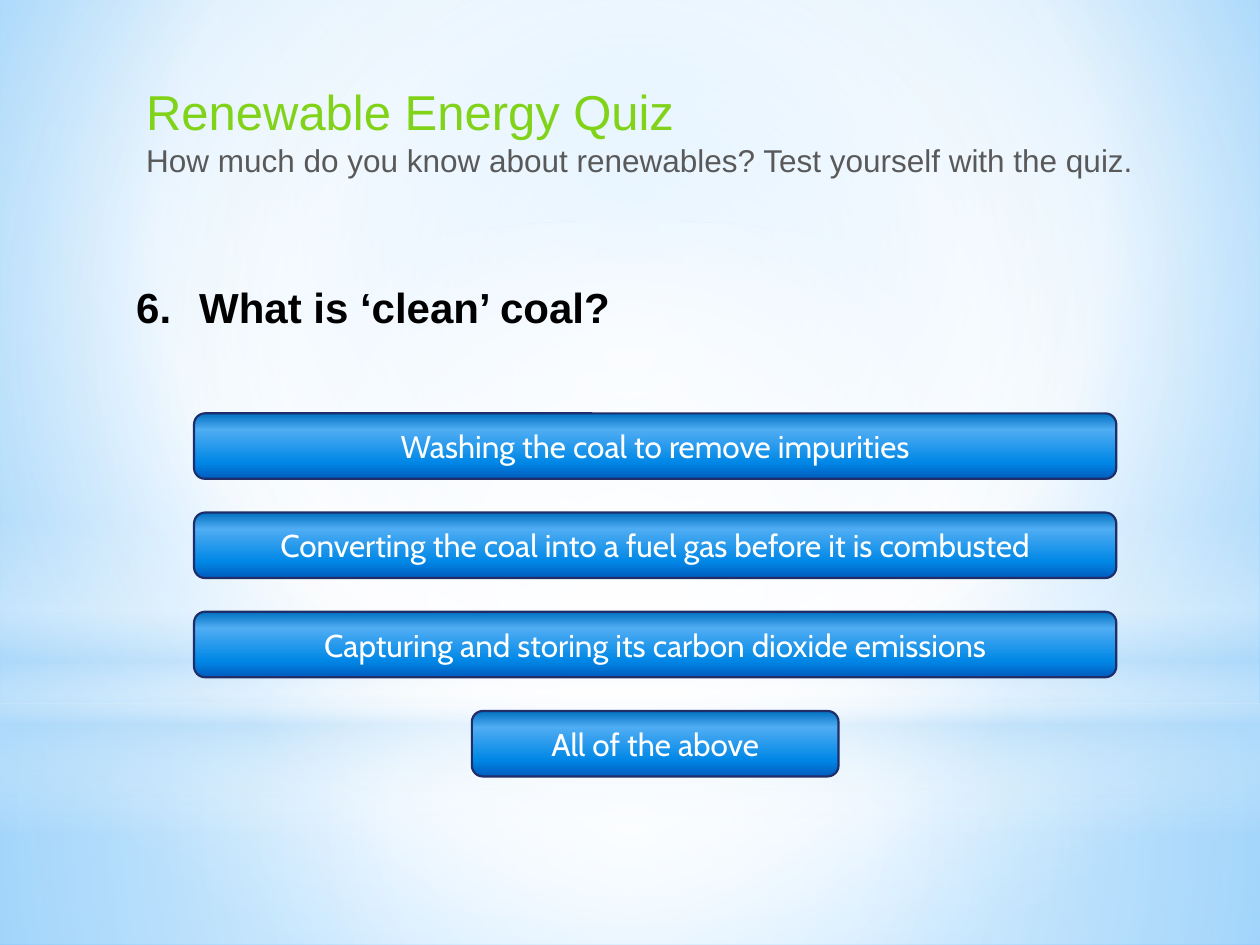
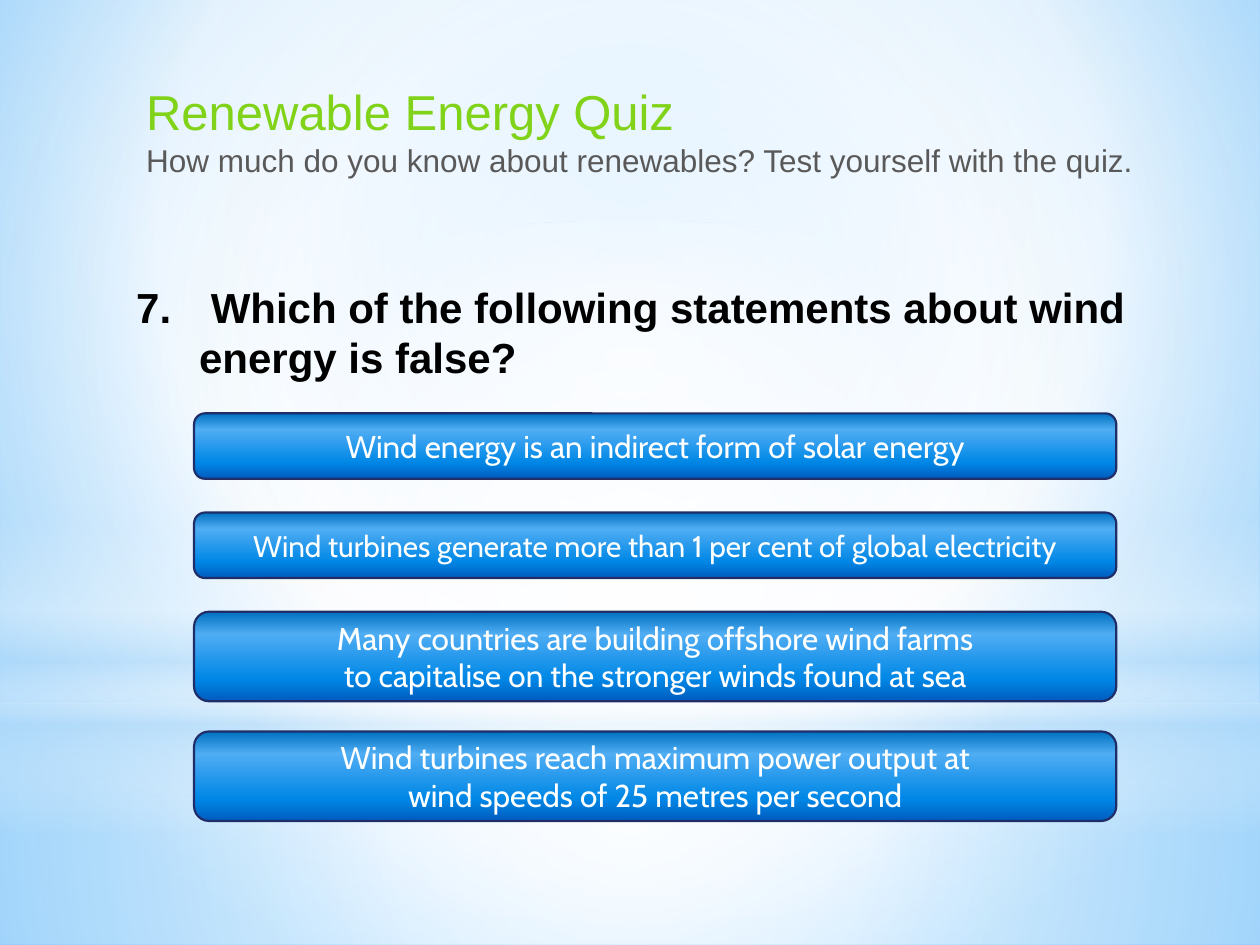
"""Builds two pages of a renewable energy quiz."""
from dataclasses import dataclass
from typing import NamedTuple

from lxml.etree import SubElement
from pptx import Presentation
from pptx.dml.color import RGBColor
from pptx.enum.shapes import MSO_SHAPE
from pptx.enum.text import MSO_ANCHOR, MSO_AUTO_SIZE, PP_ALIGN
from pptx.oxml.ns import qn
from pptx.util import Pt

GREEN, GREY, BLACK, WHITE = "81D31A", "595959", "000000", "FFFFFF"
NAVY, SKY = "1F2E69", "B4DCFA"
TEXT_FONT, BUTTON_FONT = "Arial", "Cabin"
PAGE_WIDTH, PAGE_HEIGHT = 720, 540
HORIZON = 401.8
BUTTON_CENTRE, FIRST_BUTTON_TOP = 374.4, 236.2
WIDE, NARROW = 527, 209.5
TITLE = "Renewable Energy Quiz"
SUBTITLE = "How much do you know about renewables? Test yourself with the quiz."


class Stop(NamedTuple):
    position: int
    colour: str
    opacity: int = 100


@dataclass(frozen=True)
class Gradient:
    stops: tuple[Stop, ...]
    focus: tuple[int, int, int, int] | None = None


@dataclass(frozen=True)
class Layer:
    preset: MSO_SHAPE
    top: float
    height: float
    gradient: Gradient


@dataclass(frozen=True)
class Answer:
    text: str
    width: float = WIDE
    height: float = 37.4
    pitch: float = 56.7
    size: float = 18


@dataclass(frozen=True)
class Question:
    number: int
    text: str
    height: float
    title_width: float
    answers: tuple[Answer, ...]


CENTRE = (50, 50, 50, 50)
BACKDROP = Gradient((Stop(0, "9ED5FF"), Stop(60, WHITE), Stop(100, "5BB9FF")), (20, 10, 20, 60))
BUTTON_FILL = Gradient((Stop(0, "0070C0"), Stop(25, "4FADF3"), Stop(75, "0087E6"), Stop(100, "005CBF")))
LAYERS = (
    Layer(MSO_SHAPE.RECTANGLE, HORIZON, PAGE_HEIGHT - HORIZON,
          Gradient((Stop(0, WHITE, 91), Stop(37, WHITE, 76), Stop(100, SKY, 79)), CENTRE)),
    Layer(MSO_SHAPE.RECTANGLE, 0, HORIZON,
          Gradient((Stop(0, WHITE, 89), Stop(48, WHITE, 62), Stop(100, SKY, 79)), CENTRE)),
    Layer(MSO_SHAPE.RECTANGLE, 296.6, 180,
          Gradient((Stop(0, WHITE, 0), Stop(29, WHITE, 30), Stop(45, SKY, 40),
                    Stop(55, WHITE, 26), Stop(65, SKY, 60), Stop(100, WHITE, 0)))),
    Layer(MSO_SHAPE.OVAL, 126, HORIZON,
          Gradient((Stop(0, WHITE), Stop(56, WHITE, 0)), CENTRE)),
)
QUESTIONS = (
    Question(6, "What is ‘clean’ coal?", 36.7, 635, (
        Answer("Washing the coal to remove impurities"),
        Answer("Converting the coal into a fuel gas before it is combusted"),
        Answer("Capturing and storing its carbon dioxide emissions"),
        Answer("All of the above", width=NARROW),
    )),
    Question(7, " Which of the following statements about wind energy is false?", 65.5, 612, (
        Answer("Wind energy is an indirect form of solar energy"),
        Answer("Wind turbines generate more than 1 per cent of global electricity", size=17),
        Answer("Many countries are building offshore wind farms\v"
               "to capitalise on the stronger winds found at sea", height=51.1, pitch=68.4),
        Answer("Wind turbines reach maximum power output at\v"
               "wind speeds of 25 metres per second", height=51.1, pitch=68.4),
    )),
)


def colour(value: str) -> RGBColor:
    return RGBColor.from_string(value)


def paint(fill, owner, gradient: Gradient) -> None:
    fill.gradient()
    element = next(owner.iter(qn("a:gradFill")))
    for child in list(element):
        element.remove(child)
    stop_list = SubElement(element, qn("a:gsLst"))
    for stop in gradient.stops:
        mark = SubElement(stop_list, qn("a:gs"), pos=str(stop.position * 1000))
        shade = SubElement(mark, qn("a:srgbClr"), val=stop.colour)
        if stop.opacity < 100:
            SubElement(shade, qn("a:alpha"), val=str(stop.opacity * 1000))
    if gradient.focus:
        route = SubElement(element, qn("a:path"), path="circle")
        edges = {edge: str(share * 1000) for edge, share in zip("ltrb", gradient.focus)}
        SubElement(route, qn("a:fillToRect"), **edges)
    else:
        SubElement(element, qn("a:lin"), ang="5400000", scaled="0")


def place(shape, left: float, top: float, width: float, height: float) -> None:
    shape.left, shape.top, shape.width, shape.height = map(Pt, (left, top, width, height))


def style(para, size: float, hue: str, font: str = TEXT_FONT, bold: bool = False,
          align: PP_ALIGN = PP_ALIGN.LEFT) -> None:
    para.alignment = align
    para.space_before = Pt(0)
    for span in para.runs:
        span.font.name, span.font.size, span.font.bold = font, Pt(size), bold
        span.font.color.rgb = colour(hue)


def add_panel(page, preset: MSO_SHAPE, left: float, top: float, width: float, height: float,
              gradient: Gradient):
    panel = page.shapes.add_shape(preset, *map(Pt, (left, top, width, height)))
    panel.shadow.inherit = False
    paint(panel.fill, panel._element, gradient)
    panel.line.fill.background()
    return panel


def decorate_master(deck, page) -> None:
    master = deck.slide_master
    paint(master.background.fill, master._element, BACKDROP)
    for number, layer in enumerate(LAYERS, 100):
        panel = add_panel(page, layer.preset, 0, layer.top, PAGE_WIDTH, layer.height, layer.gradient)
        panel._element.nvSpPr.cNvPr.set("id", str(number))
        master.shapes._spTree.append(panel._element)


def prepare_frame(shape):
    frame = shape.text_frame
    frame.word_wrap = True
    frame.vertical_anchor = MSO_ANCHOR.TOP
    frame.auto_size = MSO_AUTO_SIZE.SHAPE_TO_FIT_TEXT
    return frame


def write_title(page, width: float) -> None:
    box = page.shapes.title
    place(box, 76.3, 43.2, width, 63.4)
    frame = prepare_frame(box)
    frame.text = f"{TITLE}\n{SUBTITLE}"
    heading, subtitle = frame.paragraphs
    style(heading, 28, GREEN)
    style(subtitle, 18, GREY)


def write_question(page, question: Question) -> None:
    box = page.placeholders[1]
    place(box, 70.6, 157, 595.4, question.height)
    frame = prepare_frame(box)
    frame.text = question.text
    para = frame.paragraphs[0]
    properties = para._p.get_or_add_pPr()
    properties.set("marL", str(Pt(36)))
    properties.set("indent", str(-Pt(36)))
    SubElement(properties, qn("a:buFont"), typeface="+mj-lt")
    SubElement(properties, qn("a:buAutoNum"), type="arabicPeriod", startAt=str(question.number))
    style(para, 24, BLACK, bold=True)


def add_answer(page, answer: Answer, top: float) -> None:
    button = add_panel(page, MSO_SHAPE.ROUNDED_RECTANGLE, BUTTON_CENTRE - answer.width / 2, top,
                       answer.width, answer.height, BUTTON_FILL)
    button.line.color.rgb = colour(NAVY)
    button.line.width = Pt(1.25)
    frame = button.text_frame
    frame.word_wrap = True
    frame.vertical_anchor = MSO_ANCHOR.MIDDLE
    frame.text = answer.text
    style(frame.paragraphs[0], answer.size, WHITE, BUTTON_FONT, align=PP_ALIGN.CENTER)


def add_question_page(deck, question: Question):
    page = deck.slides.add_slide(deck.slide_layouts[1])
    write_title(page, question.title_width)
    write_question(page, question)
    top = FIRST_BUTTON_TOP
    for answer in question.answers:
        add_answer(page, answer, top)
        top += answer.pitch
    return page


def main() -> None:
    deck = Presentation()
    deck.slide_width, deck.slide_height = Pt(PAGE_WIDTH), Pt(PAGE_HEIGHT)
    pages = [add_question_page(deck, question) for question in QUESTIONS]
    decorate_master(deck, pages[0])
    deck.save("out.pptx")


if __name__ == "__main__":
    main()
